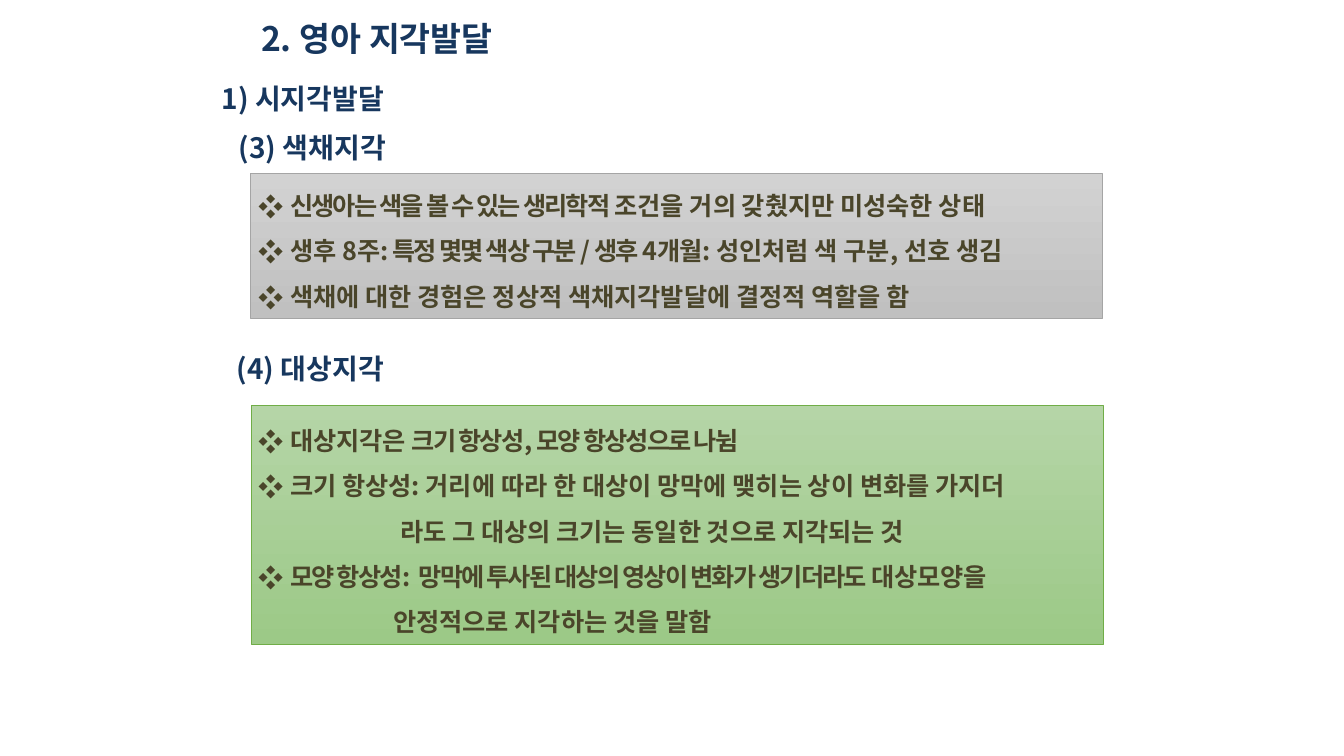
"""Build a slide on colour and object perception in infants."""
from dataclasses import dataclass

from lxml.etree import SubElement
from pptx import Presentation
from pptx.dml.color import RGBColor
from pptx.enum.shapes import MSO_SHAPE
from pptx.enum.text import MSO_ANCHOR, MSO_AUTO_SIZE, PP_ALIGN
from pptx.oxml.ns import qn
from pptx.util import Inches, Pt


@dataclass(frozen=True)
class Theme:
    """Colours, type sizes and spacing of the slide."""
    font: str = "Noto Sans CJK KR"
    heading: str = "17375E"
    body: str = "4A452A"
    grey: tuple = ("D2D2D2", "C0C0C0", "A5A5A5")
    green: tuple = ("B5D5A7", "9CC987", "70AD47")
    title_size: int = 24
    heading_size: int = 20
    body_size: int = 18
    tight: int = -130
    bullet_indent: float = 0.31


THEME = Theme()
WIDTH, HEIGHT = Inches(13.33), Inches(7.5)
HEADING_WIDTH, HEADING_HEIGHT = 47.86, 5.87
PANEL_WIDTH = 63.39
TEXT_LEFT = 18.53
BULLET = THEME.bullet_indent

HEADINGS = [
    ("1) 시지각발달", 15.75, 10.13),
    ("(3) 색채지각", 17.03, 16.67),
    ("(4) 대상지각", 16.88, 45.87),
]

COLOUR_POINTS = [
    (BULLET, [("신생아는 색을 볼 수 있는 생리학적 ", True),
              ("조건을 거의 갖췄지만 미성숙한 상태", False)]),
    (BULLET, [("생후 ", False),
              ("8주: 특정 몇몇 색상 구분 / 생후 4개월", True),
              (": 성인처럼 색 구분, 선호 생김", False)]),
    (BULLET, [("색채에 대한 경험은 정상적 색채지각발달에 결정적 역할을 함", False)]),
]

OBJECT_POINTS = [
    (BULLET, [("대상지각은 ", False), ("크기 항상성, 모양 항상성으로 나뉨", True)]),
    (BULLET, [("크기 항상성: 거리에 따라 한 대상이 망막에 맺히는 상이 변화를 가지더", False)]),
    (1.4, [("라도 그 대상의 크기는 동일한 것으로 지각되는 것", False)]),
    (BULLET, [("모양 항상성:  망막에 투사된 대상의 영상이 변화가 생기더라도 ", True),
              ("대상모양을", False)]),
    (1.33, [("안정적으로 지각하는 것을 말함", False)]),
]


def share(left, top, width, height):
    """Turn percentages of the slide's size into lengths."""
    return (int(WIDTH * left / 100), int(HEIGHT * top / 100),
            int(WIDTH * width / 100), int(HEIGHT * height / 100))


def style_run(r, size, color, tight=False):
    """Give a run its font, size, colour and letter spacing."""
    r.font.name = THEME.font
    r.font.size = Pt(size)
    r.font.bold = True
    r.font.color.rgb = RGBColor.from_string(color)
    rpr = r.font._element
    SubElement(rpr, qn("a:ea"), typeface=THEME.font)
    if tight:
        rpr.set("spc", str(THEME.tight))


def set_frame(tf):
    """Wrap the text from the top and let the box fit it."""
    tf.word_wrap = True
    tf.auto_size = MSO_AUTO_SIZE.SHAPE_TO_FIT_TEXT
    tf.vertical_anchor = MSO_ANCHOR.TOP


def set_heading(sp, text, size):
    """Write one heading line in a shape."""
    tf = sp.text_frame
    set_frame(tf)
    tf.text = text
    p = tf.paragraphs[0]
    p.alignment = PP_ALIGN.LEFT
    style_run(p.runs[0], size, THEME.heading)


def add_title(slide, text):
    """Place and fill the title placeholder."""
    sp = slide.shapes.title
    sp.left, sp.top, sp.width, sp.height = share(18.68, 1.73, HEADING_WIDTH, 6.67)
    set_heading(sp, text, THEME.title_size)


def add_heading(slide, text, left, top):
    """Add a section heading."""
    sp = slide.shapes.add_textbox(*share(left, top, HEADING_WIDTH, HEADING_HEIGHT))
    set_heading(sp, text, THEME.heading_size)


def add_panel(slide, box, colors):
    """Add a rectangle shaded from top to bottom."""
    sp = slide.shapes.add_shape(MSO_SHAPE.RECTANGLE, *share(*box))
    sp.shadow.inherit = False
    *shades, edge = colors
    sp.fill.gradient()
    sp.fill.gradient_angle = 270
    for stop, shade in zip(sp.fill.gradient_stops, shades):
        stop.color.rgb = RGBColor.from_string(shade)
    sp.line.color.rgb = RGBColor.from_string(edge)
    sp.line.width = Pt(0.5)


def set_indent(p, indent):
    """Indent a paragraph, with a hanging bullet at the bullet indent."""
    ppr = p._p.get_or_add_pPr()
    ppr.set("marL", str(Inches(indent)))
    if indent == BULLET:
        ppr.set("indent", str(-Inches(indent)))
        SubElement(ppr, qn("a:buFont"), typeface=THEME.font)
        SubElement(ppr, qn("a:buChar"), char="❖")


def add_points(slide, box, points):
    """Add a box of bulleted points and their continuation lines."""
    tf = slide.shapes.add_textbox(*share(*box)).text_frame
    set_frame(tf)
    for i, (indent, pieces) in enumerate(points):
        p = tf.add_paragraph() if i else tf.paragraphs[0]
        p.line_spacing = 1.5
        set_indent(p, indent)
        for text, tight in pieces:
            r = p.add_run()
            r.text = text
            style_run(r, THEME.body_size, THEME.body, tight)


def main():
    """Build and save the slide."""
    prs = Presentation()
    prs.slide_width, prs.slide_height = WIDTH, HEIGHT
    slide = prs.slides.add_slide(prs.slide_layouts[5])
    add_title(slide, "2. 영아 지각발달")
    for heading in HEADINGS:
        add_heading(slide, *heading)
    add_panel(slide, (18.6, 22.93, PANEL_WIDTH, 19.2), THEME.grey)
    add_points(slide, (TEXT_LEFT, 22.53, PANEL_WIDTH, 19.47), COLOUR_POINTS)
    add_panel(slide, (18.68, 53.6, PANEL_WIDTH, 31.6), THEME.green)
    add_points(slide, (TEXT_LEFT, 53.6, 66.39, 31.6), OBJECT_POINTS)
    prs.save("out.pptx")


if __name__ == "__main__":
    main()
